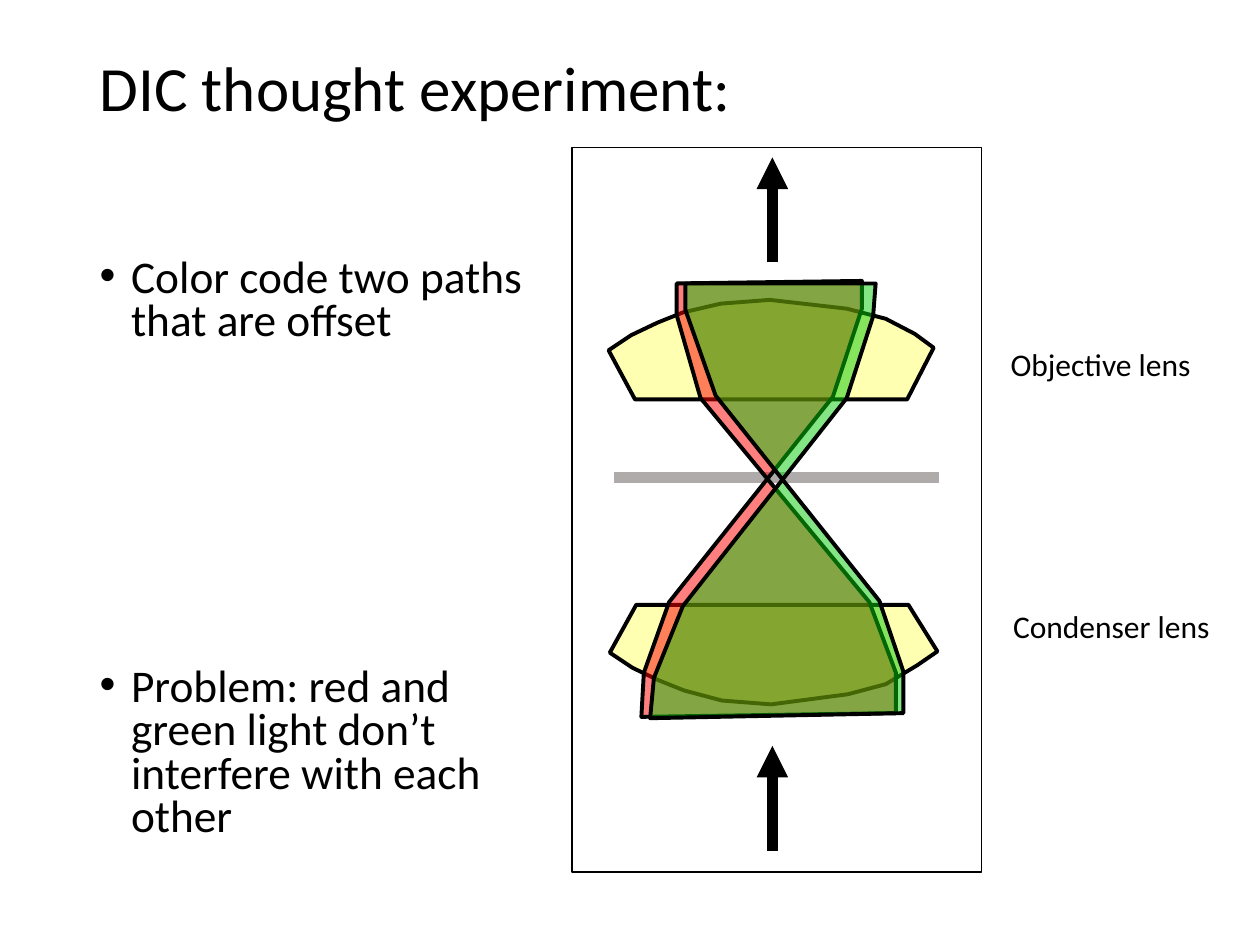
from lxml.etree import SubElement
from pptx import Presentation
from pptx.dml.color import RGBColor
from pptx.enum.shapes import MSO_CONNECTOR as Connector, MSO_SHAPE as Shape
from pptx.enum.text import MSO_ANCHOR as Anchor, MSO_AUTO_SIZE as AutoSize, PP_ALIGN as Align
from pptx.oxml.ns import qn
from pptx.util import Inches, Pt

COLORS = {"black": "000000", "white": "FFFFFF", "lens": "FFFF66",
          "red": "FF0000", "green": "0ACC0A", "specimen": "AFABAB"}
FONT = "Calibri"
TITLE = "DIC thought experiment:"
BULLETS = [("Color code two paths that are offset", 10),
           ("Problem: red and green light don’t interfere with each other", 184)]
LABELS = [("Objective lens", 7.91, 2.69, 1.65), ("Condenser lens", 7.93, 4.77, 1.78)]
FRAME = (4.54, 1.17, 3.25, 5.75)

CONDENSER = [(5.05, 4.8), (7.21, 4.8), (7.44, 5.17), (7.28, 5.28), (7.03, 5.43), (6.73, 5.51),
             (6.12, 5.59), (5.73, 5.56), (5.43, 5.48), (5.23, 5.4), (5.02, 5.3), (4.84, 5.18)]
OBJECTIVE = [(5.04, 3.17), (7.2, 3.17), (7.41, 2.76), (7.26, 2.65), (7.03, 2.53), (6.72, 2.45),
             (6.11, 2.38), (5.72, 2.41), (5.42, 2.48), (5.22, 2.56), (5.01, 2.66), (4.83, 2.78)]
RED_PATH = [(5.37, 2.25), (5.37, 2.5), (5.56, 3.16), (6.9, 4.78), (7.11, 5.34), (7.11, 5.66),
            (5.09, 5.69), (5.11, 5.34), (5.31, 4.78), (6.61, 3.15), (6.84, 2.45), (6.84, 2.23)]
GREEN_PATH = [(6.95, 2.25), (6.93, 2.51), (6.72, 3.16), (5.42, 4.81), (5.19, 5.38), (5.16, 5.7),
              (7.17, 5.66), (7.17, 5.33), (6.98, 4.77), (5.68, 3.14), (5.44, 2.46), (5.44, 2.25)]
LENSES = [(CONDENSER, "lens"), (OBJECTIVE, "lens")]
LIGHT_PATHS = [(RED_PATH, "red"), (GREEN_PATH, "green")]
SPECIMEN = (4.87, 3.79, 7.45, 3.79)
ARROW_X, ARROW_LENGTH, ARROW_BOTTOMS = 6.13, 0.83, (6.75, 2.08)


def rgb(name):
    return RGBColor.from_string(COLORS[name])


def set_font(paragraph, size):
    paragraph.font.name = FONT
    paragraph.font.size = Pt(size)
    paragraph.font.color.rgb = rgb("black")


def place(shape, left, top, width, height):
    shape.left, shape.top = Inches(left), Inches(top)
    shape.width, shape.height = Inches(width), Inches(height)


def style_glass(shape, color, line_width):
    shape.shadow.inherit = False
    shape.fill.solid()
    shape.fill.fore_color.rgb = rgb(color)
    fill_color = shape.fill._xPr.find(qn("a:solidFill"))[0]
    SubElement(fill_color, qn("a:alpha")).set("val", "50000")
    shape.line.color.rgb = rgb("black")
    shape.line.width = Pt(line_width)


def add_outline(slide, points, color):
    start, *corners = [(Inches(x), Inches(y)) for x, y in points]
    builder = slide.shapes.build_freeform(*start)
    builder.add_line_segments(corners, close=True)
    style_glass(builder.convert_to_shape(), color, 2.25)


def add_line(slide, ends, color, arrow=False):
    connector = slide.shapes.add_connector(Connector.STRAIGHT, *map(Inches, ends))
    connector.line.color.rgb = rgb(color)
    connector.line.width = Pt(6)
    if arrow:
        SubElement(connector.line._get_or_add_ln(), qn("a:tailEnd")).set("type", "triangle")
    SubElement(connector._element.spPr, qn("a:effectLst"))


def fill_text(slide):
    title, body = slide.shapes.title, slide.placeholders[1]
    place(title, 0.69, 0.4, 8.62, 1.45)
    place(body, 0.69, 2, 3.61, 4.76)
    for holder in (title, body):
        holder.text_frame.auto_size = AutoSize.NONE
        holder.text_frame.vertical_anchor = Anchor.TOP
    title.text_frame.text = TITLE
    heading = title.text_frame.paragraphs[0]
    heading.alignment, heading.line_spacing = Align.LEFT, 0.9
    set_font(heading, 36)
    body.text_frame.text = "\n".join(text for text, _ in BULLETS)
    for paragraph, (_, gap) in zip(body.text_frame.paragraphs, BULLETS):
        paragraph.line_spacing, paragraph.space_before = 0.8, Pt(gap)
        properties = paragraph._p.get_or_add_pPr()
        properties.set("marL", str(Inches(0.25)))
        properties.set("indent", str(Inches(-0.25)))
        set_font(paragraph, 25.9)


def draw_microscope(slide):
    frame = slide.shapes.add_shape(Shape.RECTANGLE, *map(Inches, FRAME))
    style_glass(frame, "white", 0.75)
    for points, color in LENSES:
        add_outline(slide, points, color)
    add_line(slide, SPECIMEN, "specimen")
    for points, color in LIGHT_PATHS:
        add_outline(slide, points, color)
    for bottom in ARROW_BOTTOMS:
        add_line(slide, (ARROW_X, bottom, ARROW_X, bottom - ARROW_LENGTH), "black", arrow=True)


def add_labels(slide):
    for text, left, top, width in LABELS:
        box = slide.shapes.add_textbox(*map(Inches, (left, top, width, 0.4)))
        frame = box.text_frame
        frame.text, frame.word_wrap = text, False
        frame.auto_size, frame.vertical_anchor = AutoSize.SHAPE_TO_FIT_TEXT, Anchor.MIDDLE
        frame.paragraphs[0].alignment = Align.CENTER
        set_font(frame.paragraphs[0], 18)


def main():
    """Build the DIC thought experiment slide."""
    presentation = Presentation()
    presentation.slide_width, presentation.slide_height = Inches(10), Inches(7.5)
    slide = presentation.slides.add_slide(presentation.slide_layouts[1])
    fill_text(slide)
    draw_microscope(slide)
    add_labels(slide)
    presentation.save("out.pptx")


if __name__ == "__main__":
    main()
